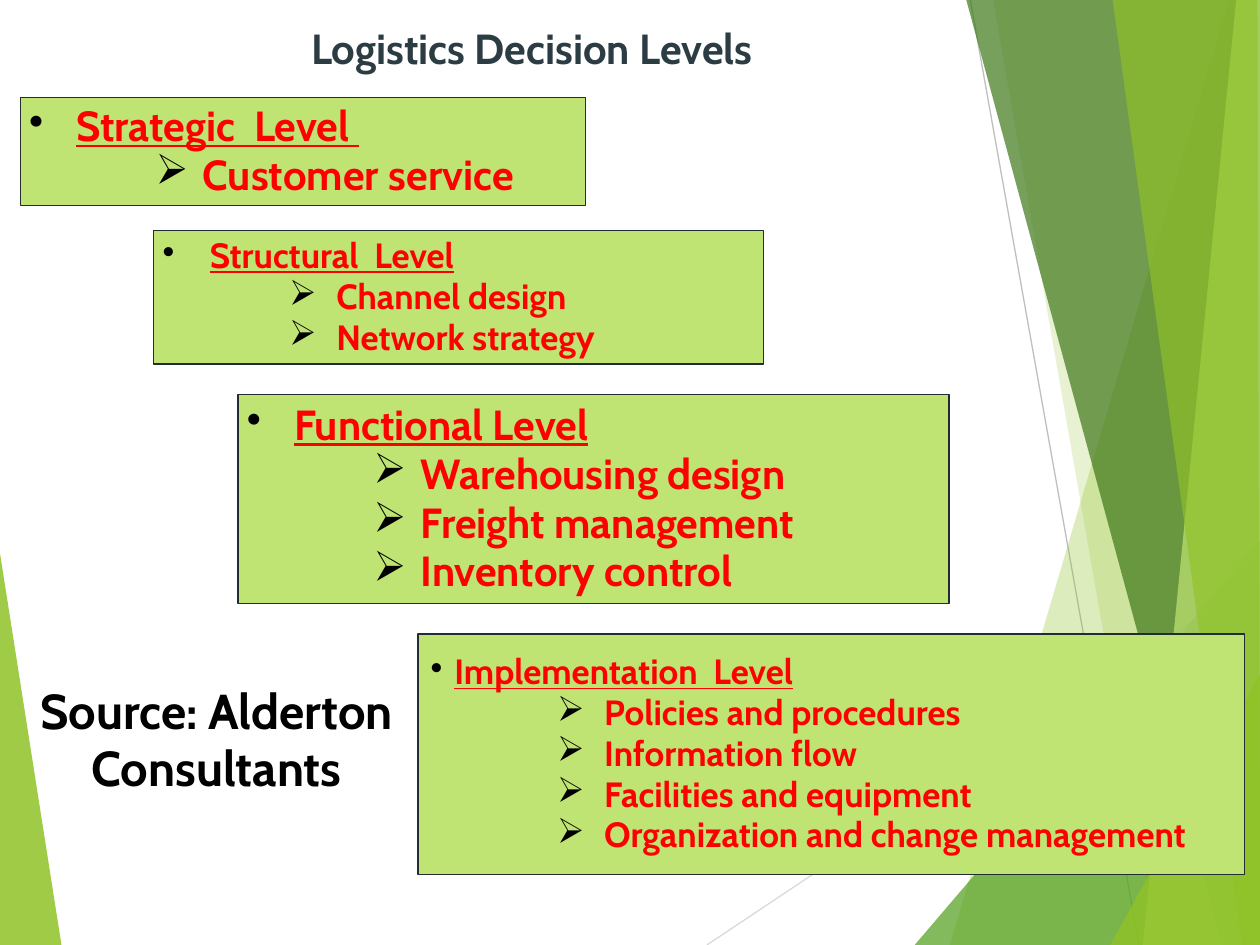
from dataclasses import dataclass

from lxml.etree import SubElement
from pptx import Presentation
from pptx.dml.color import RGBColor
from pptx.enum.shapes import MSO_CONNECTOR, MSO_SHAPE
from pptx.enum.text import MSO_ANCHOR, PP_ALIGN
from pptx.oxml.ns import qn
from pptx.util import Cm, Pt

WIDTH, HEIGHT = 25.4, 19.05
FONT = "Cabin"
LINE_SPACING = 0.97
LEAF, MOSS, FOREST, LIME = "90C226", "54A021", "3F7819", "C0E474"
INK, RED, BLACK, SLATE = "212D32", "FF0000", "000000", "2C3C43"


@dataclass
class Facet:
    points: list[tuple[float, float]]
    color: str
    opacity: int


@dataclass
class Ray:
    start: tuple[float, float]
    end: tuple[float, float]
    color: str


@dataclass
class Level:
    box: tuple[float, float, float, float]
    heading: str
    decisions: list[str]
    size: int
    heading_indent: float = 0.95
    margins: tuple[float, float] = (0.18, 0.1)
    preset: MSO_SHAPE = MSO_SHAPE.RECTANGLE


BOTTOM_RIGHT, TOP_RIGHT = (WIDTH, HEIGHT), (WIDTH, 0)

LEFT_FACET = Facet([(0, 11.15), (1.24, HEIGHT), (0, HEIGHT)], LEAF, 85)
RAYS = [
    Ray((14.25, HEIGHT), (WIDTH, 11.61), "D9D9D9"),
    Ray((19.56, 0), (22.96, HEIGHT), "BFBFBF"),
]
RIGHT_FACETS = [
    Facet([(24.77, 0), (19.15, HEIGHT), BOTTOM_RIGHT, TOP_RIGHT], LEAF, 30),
    Facet([(20.02, 0), (23.34, HEIGHT), BOTTOM_RIGHT, TOP_RIGHT], LEAF, 20),
    Facet([(18.44, HEIGHT), (WIDTH, 10.9), BOTTOM_RIGHT], MOSS, 72),
    Facet([(19.48, 0), (24.64, HEIGHT), BOTTOM_RIGHT, TOP_RIGHT], FOREST, 70),
    Facet([(24.92, 0), (23.04, HEIGHT), BOTTOM_RIGHT, TOP_RIGHT], LIME, 70),
    Facet([(22.43, 0), (25.04, HEIGHT), BOTTOM_RIGHT, (25.35, 0)], LEAF, 65),
    Facet([(22.38, HEIGHT), (WIDTH, 13.59), BOTTOM_RIGHT], LEAF, 80),
]
LEVELS = [
    Level((8.43, 12.78, 16.66, 4.85), "Implementation  Level",
          ["Policies and procedures", "Information flow",
           "Facilities and equipment", "Organization and change management"],
          20, 0.48, (0.25, 0.13), MSO_SHAPE.ROUNDED_RECTANGLE),
    Level((4.8, 7.95, 14.33, 4.22), "Functional Level",
          ["Warehousing design", "Freight management", "Inventory control"], 24),
    Level((3.1, 4.65, 12.29, 2.69), "Structural  Level",
          ["Channel design", "Network strategy"], 20),
    Level((0.41, 1.96, 11.4, 2.18), "Strategic  Level ",
          ["Customer service"], 24),
]


def rgb(color: str) -> RGBColor:
    return RGBColor.from_string(color)


def draw_facet(slide, facet: Facet) -> None:
    first, *rest = [(Cm(x), Cm(y)) for x, y in facet.points]
    builder = slide.shapes.build_freeform(*first)
    builder.add_line_segments(rest, close=True)
    shape = builder.convert_to_shape()
    shape.shadow.inherit = False
    shape.line.fill.background()
    shape.fill.solid()
    shape.fill.fore_color.rgb = rgb(facet.color)
    color = shape.fill._xPr.find(f".//{qn('a:srgbClr')}")
    SubElement(color, qn("a:alpha"), val=str(facet.opacity * 1000))


def draw_ray(slide, ray: Ray) -> None:
    line = slide.shapes.add_connector(
        MSO_CONNECTOR.STRAIGHT, *map(Cm, ray.start + ray.end))
    line.line.color.rgb = rgb(ray.color)
    line.line.width = Pt(0.75)
    SubElement(line._element.spPr, qn("a:effectLst"))


def prepare_frame(frame, anchor: MSO_ANCHOR, margins: tuple[float, float]) -> None:
    frame.word_wrap = True
    frame.vertical_anchor = anchor
    frame.margin_left = frame.margin_right = Cm(margins[0])
    frame.margin_top = frame.margin_bottom = Cm(margins[1])


def format_paragraph(paragraph, size: int, color: str, align: PP_ALIGN) -> None:
    paragraph.alignment = align
    paragraph.line_spacing = LINE_SPACING
    for run in paragraph.runs:
        run.font.name = FONT
        run.font.size = Pt(size)
        run.font.bold = True
        run.font.color.rgb = rgb(color)


def add_bullet(paragraph, symbol: str, left: float, hanging: float) -> None:
    properties = paragraph._p.get_or_add_pPr()
    properties.set("marL", str(Cm(left)))
    properties.set("indent", str(-Cm(hanging)))
    bullet_color = SubElement(properties, qn("a:buClr"))
    SubElement(bullet_color, qn("a:srgbClr"), val=BLACK)
    SubElement(properties, qn("a:buChar"), char=symbol)


def draw_level(slide, level: Level) -> None:
    box = slide.shapes.add_shape(level.preset, *map(Cm, level.box))
    box.shadow.inherit = False
    if level.preset == MSO_SHAPE.ROUNDED_RECTANGLE:
        box.adjustments[0] = 0
    box.fill.solid()
    box.fill.fore_color.rgb = rgb(LIME)
    box.line.color.rgb = rgb(INK)
    box.line.width = Pt(0.75)

    frame = box.text_frame
    prepare_frame(frame, MSO_ANCHOR.MIDDLE, level.margins)
    frame.text = "\n".join([level.heading, *level.decisions])
    heading, *decisions = frame.paragraphs
    for paragraph in frame.paragraphs:
        format_paragraph(paragraph, level.size, RED, PP_ALIGN.LEFT)
    heading.runs[0].font.underline = True
    add_bullet(heading, "•", level.heading_indent, level.heading_indent)
    for decision in decisions:
        decision.level = 1
        add_bullet(decision, "➢", 3.5, 0.95)


def draw_caption(slide, box: tuple[float, float, float, float], text: str,
                 size: int, color: str, anchor: MSO_ANCHOR) -> None:
    frame = slide.shapes.add_textbox(*map(Cm, box)).text_frame
    prepare_frame(frame, anchor, (0.18, 0.1))
    frame.text = text
    format_paragraph(frame.paragraphs[0], size, color, PP_ALIGN.CENTER)


def main() -> None:
    deck = Presentation()
    deck.slide_width, deck.slide_height = Cm(WIDTH), Cm(HEIGHT)
    slide = deck.slides.add_slide(deck.slide_layouts[6])

    draw_facet(slide, LEFT_FACET)
    for ray in RAYS:
        draw_ray(slide, ray)
    for facet in RIGHT_FACETS:
        draw_facet(slide, facet)
    for level in LEVELS:
        draw_level(slide, level)
    draw_caption(slide, (1.93, 0.41, 17.58, 1.19), "Logistics Decision Levels",
                 24, SLATE, MSO_ANCHOR.BOTTOM)
    draw_caption(slide, (0.3, 13.69, 8.13, 2.51), "Source: Alderton Consultants",
                 28, BLACK, MSO_ANCHOR.MIDDLE)
    deck.save("out.pptx")


if __name__ == "__main__":
    main()
